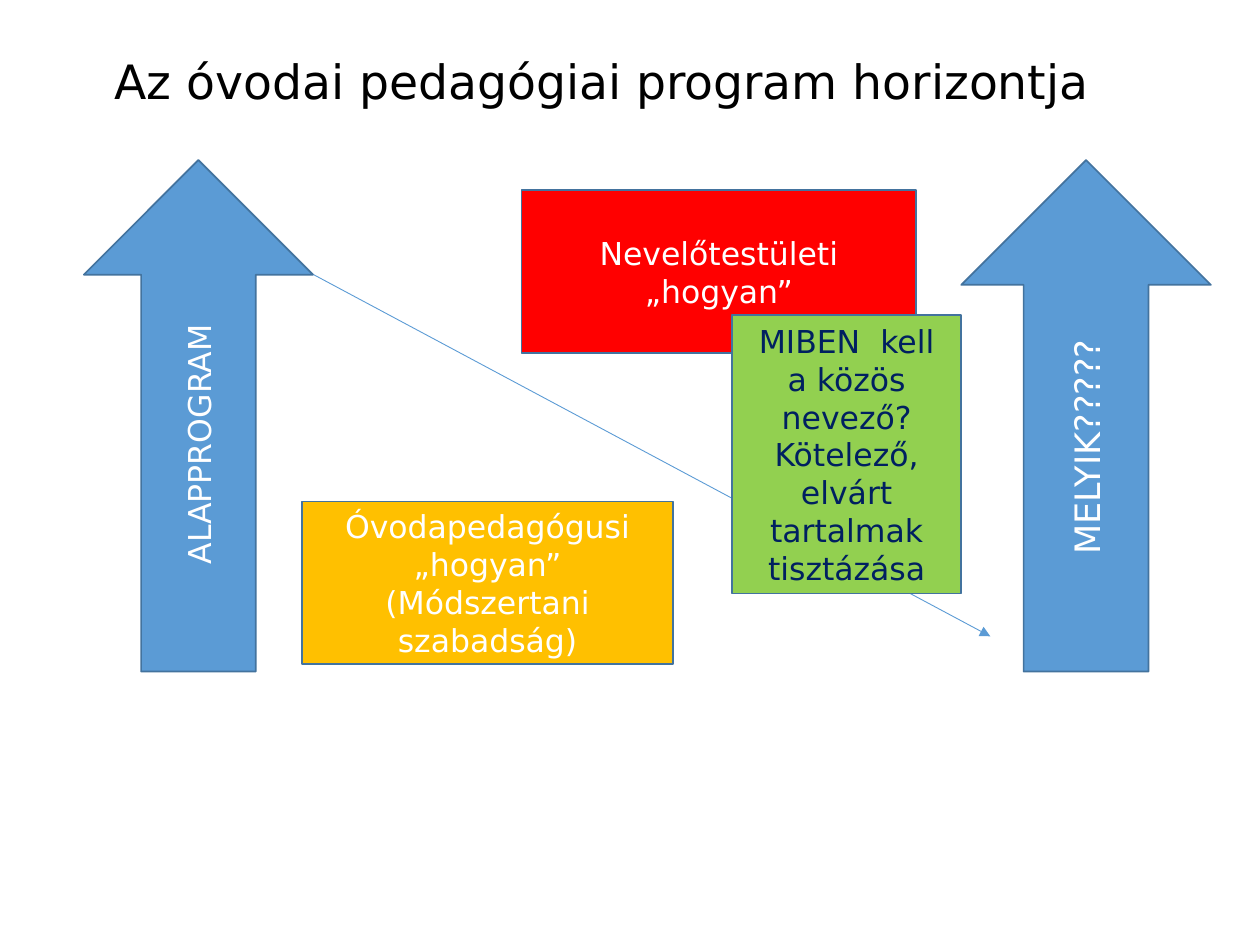
import pptx
import pptx.util
import pptx.dml.color
import pptx.enum.shapes
import pptx.enum.text
import pptx.oxml
import pptx.oxml.ns

Pt = pptx.util.Pt
RGB = pptx.dml.color.RGBColor
KIND = pptx.enum.shapes.MSO_SHAPE
ALIGN = pptx.enum.text.PP_ALIGN
MIDDLE = pptx.enum.text.MSO_ANCHOR.MIDDLE

FONT = "DejaVu Sans"
BLACK = RGB(0x00, 0x00, 0x00)
WHITE = RGB(0xFF, 0xFF, 0xFF)
BLUE = RGB(0x5B, 0x9B, 0xD5)
EDGE = RGB(0x43, 0x73, 0x9E)
RED = RGB(0xFF, 0x00, 0x00)
AMBER = RGB(0xFF, 0xC0, 0x00)
GREEN = RGB(0x92, 0xD0, 0x50)
NAVY = RGB(0x00, 0x20, 0x60)


def set_text(shape, text, size, color, align):
    frame = shape.text_frame
    frame.text = text
    frame.word_wrap = True
    frame.auto_size = pptx.enum.text.MSO_AUTO_SIZE.NONE
    frame.vertical_anchor = MIDDLE
    for para in frame.paragraphs:
        para.alignment = align
        for run in para.runs:
            run.font.name = FONT
            run.font.size = Pt(size)
            run.font.color.rgb = color


def add_title(slide, text):
    title = slide.shapes.title
    title.left, title.top = Pt(58.3), Pt(20.2)
    title.width, title.height = Pt(634.3), Pt(56.2)
    set_text(title, text, 27, BLACK, ALIGN.LEFT)
    title.text_frame.paragraphs[0].line_spacing = 0.9


def add_box(slide, kind, place, text, fill, color=WHITE, size=18):
    box = slide.shapes.add_shape(kind, *map(Pt, place))
    box.shadow.inherit = False
    box.fill.solid()
    box.fill.fore_color.rgb = fill
    box.line.color.rgb = EDGE
    box.line.width = Pt(1)
    set_text(box, text, size, color, ALIGN.CENTER)
    return box


def add_arrow(slide, mid_x, mid_y, width, text, size):
    """Add an upward arrow whose text reads from bottom to top."""
    length = 292.3
    place = (mid_x - length / 2, mid_y - width / 2, length, width)
    arrow = add_box(slide, KIND.RIGHT_ARROW, place, text, BLUE, size=size)
    arrow.rotation = 270


def add_line(slide, start, end):
    line = slide.shapes.add_connector(
        pptx.enum.shapes.MSO_CONNECTOR.STRAIGHT, *map(Pt, start + end))
    line.line.color.rgb = BLUE
    line.line.width = Pt(0.5)
    space = pptx.oxml.ns.nsdecls("a")
    tip = pptx.oxml.parse_xml(f'<a:tailEnd {space} type="triangle"/>')
    line.line._get_or_add_ln().append(tip)
    flat = pptx.oxml.parse_xml(f"<a:effectLst {space}/>")
    line._element.spPr.append(flat)


def main():
    deck = pptx.Presentation()
    deck.slide_width, deck.slide_height = Pt(720), Pt(540)
    slide = deck.slides.add_slide(deck.slide_layouts[5])
    add_title(slide, "Az óvodai pedagógiai program horizontja")
    add_arrow(slide, 113.4, 237.6, 131, "ALAPPROGRAM", 18)
    add_arrow(slide, 620.6, 237.6, 142.6, "MELYIK?????", 20)
    add_line(slide, (179.3, 157), (565.9, 363.6))
    boxes = [
        ((298.1, 108.7, 225.4, 92.9), "Nevelőtestületi „hogyan”", RED, WHITE),
        ((172.8, 286.6, 211.7, 92.9),
         "Óvodapedagógusi „hogyan”\n(Módszertani szabadság)", AMBER, WHITE),
        ((418.3, 180, 131, 159.1),
         "MIBEN  kell a közös nevező? Kötelező, elvárt tartalmak tisztázása",
         GREEN, NAVY),
    ]
    for place, text, fill, color in boxes:
        add_box(slide, KIND.FLOWCHART_PROCESS, place, text, fill, color)
    deck.save("out.pptx")


if __name__ == "__main__":
    main()
